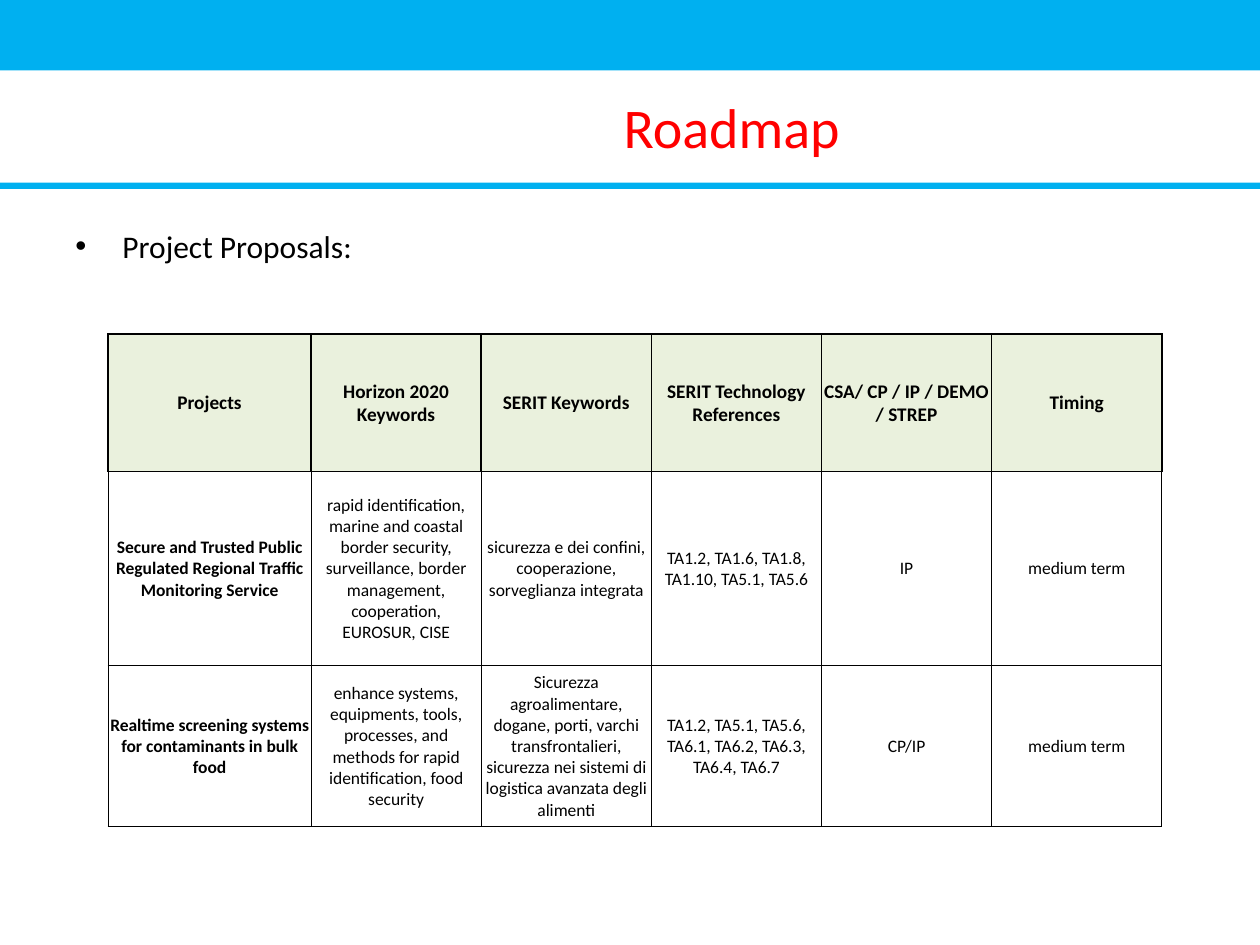
from lxml.etree import SubElement
from pptx import Presentation
from pptx.dml.color import RGBColor
from pptx.enum.shapes import MSO_SHAPE
from pptx.enum.text import MSO_ANCHOR, PP_ALIGN
from pptx.oxml.ns import qn
from pptx.util import Cm, Pt

BLUE, RED, BLACK, PALE_GREEN = "00B0F0", "FF0000", "000000", "EAF1DD"
SLIDE_WIDTH, SLIDE_HEIGHT = 25.4, 19.05

COLUMN_WIDTHS = [4.09] + [3.43] * 5
ROW_HEIGHTS = [2.77, 3.91, 3.25]
PROJECT_ROWS = [
    ["Projects", "Horizon 2020 Keywords", "SERIT Keywords",
     "SERIT Technology References", "CSA/ CP / IP / DEMO / STREP", "Timing"],
    ["Secure and Trusted Public Regulated Regional Traffic Monitoring Service",
     "rapid identification, marine and coastal border security, surveillance, "
     "border management, cooperation, EUROSUR, CISE",
     "sicurezza e dei confini, cooperazione, sorveglianza integrata",
     "TA1.2, TA1.6, TA1.8, TA1.10, TA5.1, TA5.6", "IP", "medium term"],
    ["Realtime screening systems for contaminants in bulk food",
     "enhance systems, equipments, tools, processes, and methods for rapid "
     "identification, food security",
     "Sicurezza agroalimentare, dogane, porti, varchi transfrontalieri, "
     "sicurezza nei sistemi di logistica avanzata degli alimenti",
     "TA1.2, TA5.1, TA5.6, TA6.1, TA6.2, TA6.3, TA6.4, TA6.7", "CP/IP", "medium term"],
]


def color(value):
    return RGBColor.from_string(value)


def set_attributes(target, values):
    for name, value in values.items():
        setattr(target, name, value)


def format_paragraph(paragraph, text, size, font_color, alignment, bold=False):
    paragraph.text = text
    paragraph.alignment = alignment
    set_attributes(paragraph.font, {"name": "Calibri", "size": Pt(size), "bold": bold})
    paragraph.font.color.rgb = color(font_color)


def add_bar(slide, top, height):
    shape = slide.shapes.add_shape(
        MSO_SHAPE.RECTANGLE, 0, Cm(top), Cm(SLIDE_WIDTH), Cm(height))
    shape.shadow.inherit = False
    shape.fill.solid()
    shape.fill.fore_color.rgb = color(BLUE)
    shape.line.fill.background()


def format_title(slide, text):
    title = slide.shapes.title
    set_attributes(title, {"left": Cm(4.6), "top": Cm(1.45),
                           "width": Cm(20.3), "height": Cm(2.2)})
    title.text_frame.vertical_anchor = MSO_ANCHOR.MIDDLE
    format_paragraph(title.text_frame.paragraphs[0], text, 32, RED, PP_ALIGN.CENTER)


def add_bullet_text(slide, text):
    shape = slide.shapes.add_textbox(Cm(1.27), Cm(4.45), Cm(22.86), Cm(12.57))
    shape.text_frame.word_wrap = True
    paragraph = shape.text_frame.paragraphs[0]
    properties = paragraph._p.get_or_add_pPr()
    properties.set("marL", str(Cm(0.95)))
    properties.set("indent", str(Cm(-0.95)))
    SubElement(properties, qn("a:buFont"), typeface="Arial")
    SubElement(properties, qn("a:buChar"), char="•")
    format_paragraph(paragraph, text, 18, BLACK, PP_ALIGN.JUSTIFY)


def set_borders(cell, widths):
    properties = cell._tc.get_or_add_tcPr()
    for side in ("L", "R", "T", "B"):
        line = SubElement(properties, qn(f"a:ln{side}"), w=str(Pt(widths[side])))
        fill = SubElement(line, qn("a:solidFill"))
        SubElement(fill, qn("a:srgbClr"), val=BLACK)


def format_cell(cell, text, row, column):
    is_header = row == 0
    set_attributes(cell, {"margin_left": Cm(0.03), "margin_right": Cm(0.03),
                          "margin_top": Cm(0.03), "margin_bottom": 0,
                          "vertical_anchor": MSO_ANCHOR.MIDDLE})
    format_paragraph(cell.text_frame.paragraphs[0], text, 11 if is_header else 10,
                     BLACK, PP_ALIGN.CENTER, bold=is_header or column == 0)
    # Header edges are 1 pt, all others half a point
    widths = dict.fromkeys("LRTB", 1 if is_header else 0.5)
    if row == 1:
        widths["T"] = 1
    set_borders(cell, widths)
    if is_header:
        cell.fill.solid()
        cell.fill.fore_color.rgb = color(PALE_GREEN)
    else:
        cell.fill.background()


def add_project_table(slide):
    table = slide.shapes.add_table(
        len(ROW_HEIGHTS), len(COLUMN_WIDTHS), Cm(2.18), Cm(6.73),
        Cm(sum(COLUMN_WIDTHS)), Cm(sum(ROW_HEIGHTS))).table
    set_attributes(table, {"first_row": False, "horz_banding": False})
    for column, width in zip(table.columns, COLUMN_WIDTHS):
        column.width = Cm(width)
    for row, height in zip(table.rows, ROW_HEIGHTS):
        row.height = Cm(height)
    for row, texts in enumerate(PROJECT_ROWS):
        for column, text in enumerate(texts):
            format_cell(table.cell(row, column), text, row, column)


def main():
    presentation = Presentation()
    set_attributes(presentation, {"slide_width": Cm(SLIDE_WIDTH),
                                  "slide_height": Cm(SLIDE_HEIGHT)})
    slide = presentation.slides.add_slide(presentation.slide_layouts[5])
    # Top band and the rule under the title
    add_bar(slide, 0, 1.42)
    add_bar(slide, 3.68, 0.13)
    # Content
    format_title(slide, "Roadmap")
    add_bullet_text(slide, "Project Proposals:")
    add_project_table(slide)
    presentation.save("out.pptx")


if __name__ == "__main__":
    main()
